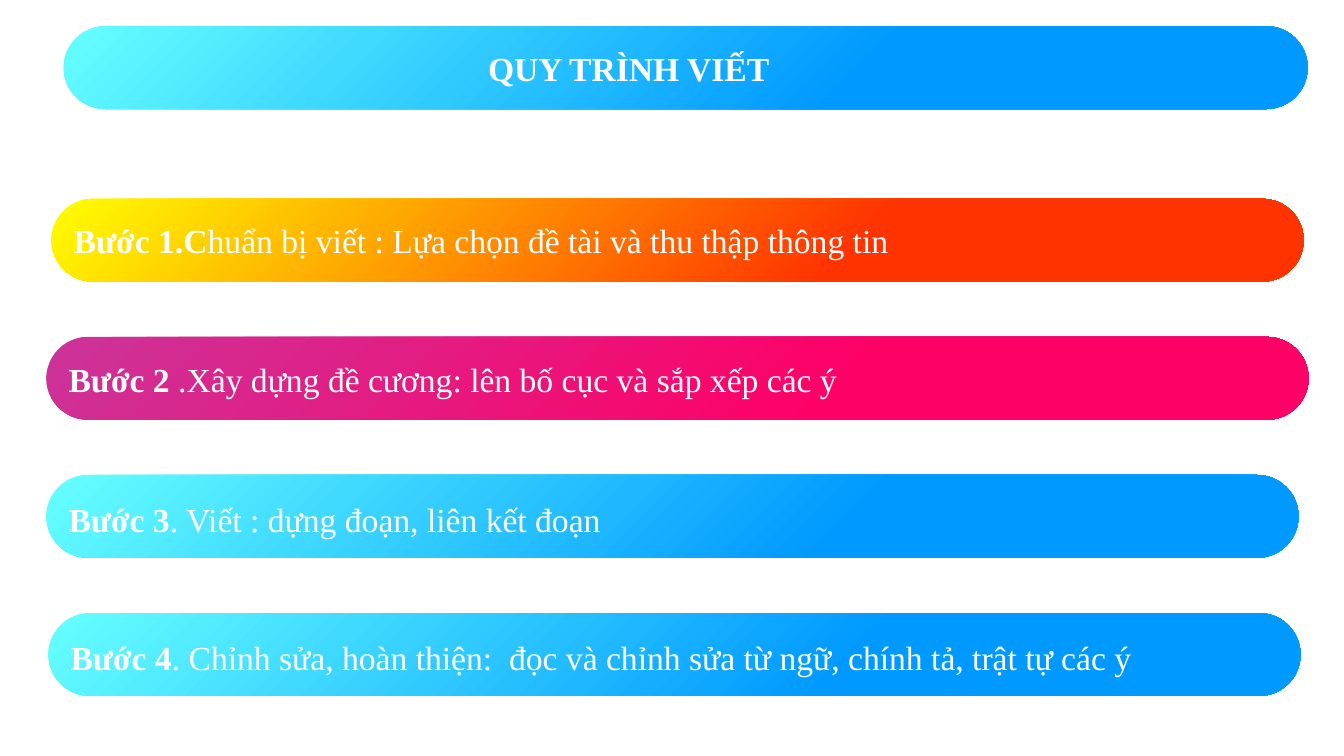
from pptx import Presentation
from pptx.dml.color import RGBColor
from pptx.enum.shapes import MSO_SHAPE
from pptx.enum.text import MSO_ANCHOR, PP_ALIGN
from pptx.util import Inches, Pt


def rgb(value):
    return RGBColor.from_string(value)


class Deck:
    FONT = "Times New Roman"
    SIZE = 24
    TEXT = "FFFFFF"
    COL = 13.33 / 100
    ROW = 1.37
    TOP = 0.26
    BAR_ROWS = 0.6

    def __init__(self):
        self.prs = Presentation()
        self.prs.slide_width = Inches(13.33)
        self.prs.slide_height = Inches(7.5)
        self.slide = self.prs.slides.add_slide(self.prs.slide_layouts[6])

    def cols(self, n):
        return Inches(n * self.COL)

    def rows(self, n):
        return Inches(n * self.ROW)

    def bar(self, col, row, width, colors, parts, indent=0.75, drop=0.04):
        sp = self.slide.shapes.add_shape(
            MSO_SHAPE.ROUNDED_RECTANGLE,
            self.cols(col), Inches(self.TOP) + self.rows(row),
            self.cols(width), self.rows(self.BAR_ROWS))
        sp.adjustments[0] = 0.5
        sp.shadow.inherit = False
        sp.line.fill.background()
        self.gradient(sp.fill, colors)
        tf = sp.text_frame
        tf.word_wrap = True
        tf.vertical_anchor = MSO_ANCHOR.MIDDLE
        tf.margin_left = self.cols(indent)
        tf.margin_top = self.rows(drop)
        self.text(tf.paragraphs[0], parts)

    def gradient(self, fill, colors):
        fill.gradient()
        fill.gradient_angle = 315
        for stop, position, color in zip(fill.gradient_stops, (0, 0.64), colors):
            stop.position = position
            stop.color.rgb = rgb(color)

    def text(self, p, parts):
        p.alignment = PP_ALIGN.LEFT
        p.space_after = Pt(5)
        for i, part in enumerate(parts):
            r = p.add_run()
            r.text = part
            r.font.name = self.FONT
            r.font.size = Pt(self.SIZE)
            r.font.bold = i == 0
            r.font.color.rgb = rgb(self.TEXT)


def main():
    deck = Deck()
    blue = ("66FFFF", "0099FF")
    pink = ("CC3399", "FF0066")
    orange = ("FFFF00", "FF3300")
    steps = [
        (3.83, 93.17, orange, 0.04,
         ("Bước 1.C", "huẩn bị viết : Lựa chọn đề tài và thu thập thông tin")),
        (3.45, 93.92, pink, 0.04,
         ("Bước 2", " .Xây dựng đề cương: lên bố cục và sắp xếp các ý")),
        (3.45, 93.17, blue, 0.08,
         ("Bước 3", ". Viết : dựng đoạn, liên kết đoạn")),
        (3.6, 93.17, blue, 0.08,
         ("Bước 4", ". Chỉnh sửa, hoàn thiện:  đọc và chỉnh sửa từ ngữ, "
                    "chính tả, trật tự các ý")),
    ]
    deck.bar(4.73, 0, 92.57, blue, ("QUY TRÌNH VIẾT",), indent=30.68)
    for i, (col, width, colors, drop, parts) in enumerate(steps):
        deck.bar(col, 1.25 + i, width, colors, parts, drop=drop)
    deck.prs.save("out.pptx")


if __name__ == "__main__":
    main()
